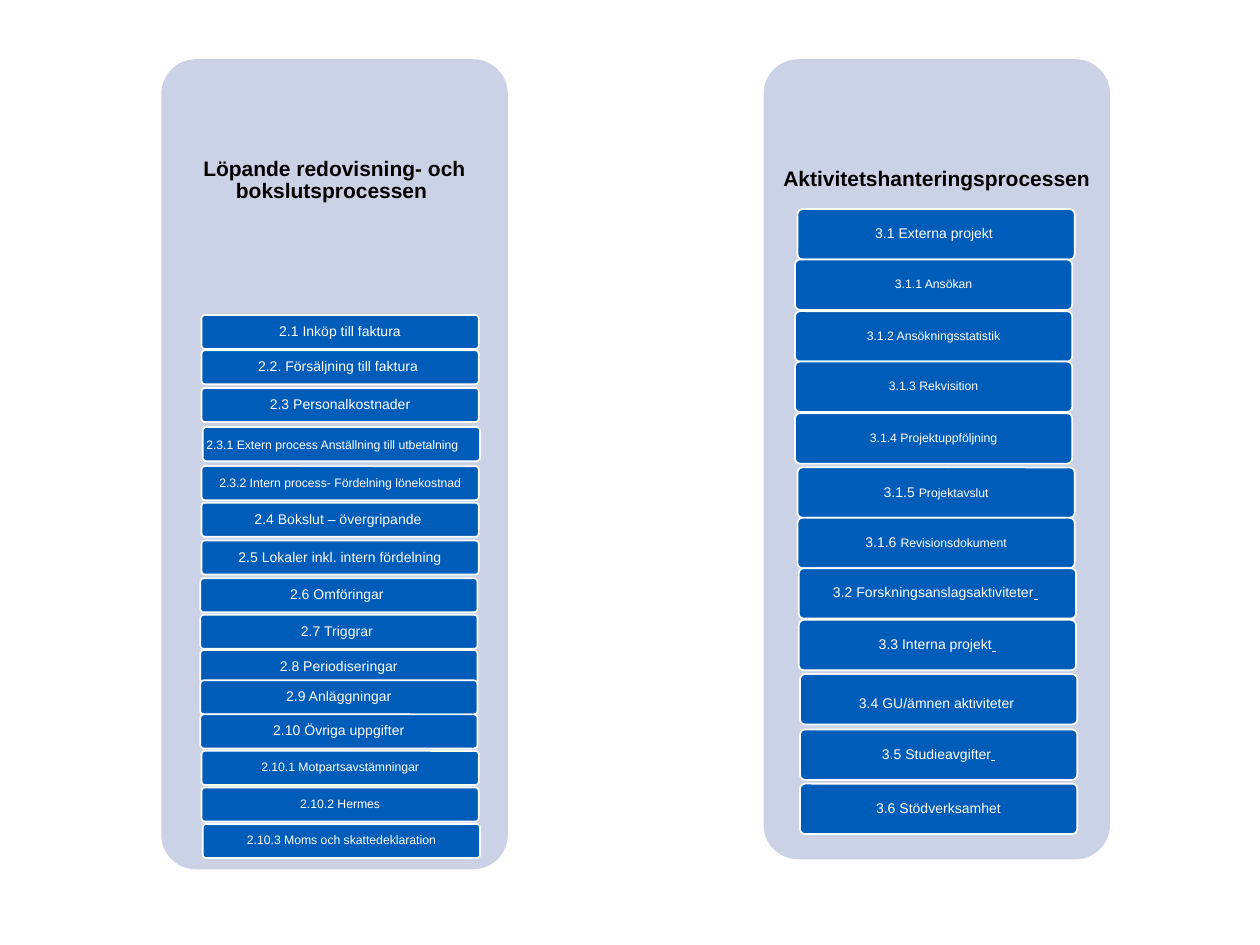
from pptx import Presentation
from pptx.dml.color import RGBColor
from pptx.enum import shapes, text
from pptx.util import Inches, Pt

COLORS = {"panel": "CCD2E6", "step": "005CB9", "white": "FFFFFF", "black": "000000"}
FONT = "Arial"
MAIN, SUB = 8, 7  # text sizes of the two step levels
STEP_WIDTH = 2.2

# Each step: offset from the panel's left and top, its runs, text options
LEFT_STEPS = [
    (0.32, 2.03, [("2.1 Inköp till faktura", MAIN)], {}),
    (0.32, 2.31, [("2.2. Försäljning till faktura ", MAIN)], {}),
    (0.32, 2.61, [("2.3 Personalkostnader", MAIN)], {}),
    (0.33, 2.92, [("2.3.1 Extern process Anställning till utbetalning", SUB)],
     {"align": text.PP_ALIGN.LEFT, "spacing": 1.0}),
    (0.32, 3.23, [("2.3.2 Intern process- Fördelning lönekostnad", SUB)], {}),
    (0.32, 3.52, [("2.4 Bokslut – övergripande ", MAIN)], {}),
    (0.32, 3.82, [("2.5 Lokaler inkl. intern fördelning", MAIN)], {}),
    (0.31, 4.12, [("2.6 Omföringar ", MAIN)], {}),
    (0.31, 4.41, [("2.7 Triggrar ", MAIN)], {}),
    (0.31, 4.69, [("2.8 Periodiseringar", MAIN)], {}),
    (0.31, 4.93, [("2.9 Anläggningar", MAIN)], {}),
    (0.31, 5.2, [("2.10 Övriga uppgifter", MAIN)], {}),
    (0.32, 5.49, [("2.10.1 Motpartsavstämningar", SUB)], {}),
    (0.32, 5.78, [("2.10.2 Hermes", SUB)], {}),
    (0.33, 6.07, [("2.10.3 Moms och skattedeklaration", SUB)], {}),
]
RIGHT_STEPS = [
    (0.27, 1.19, [("3.1 Externa projekt ", MAIN)], {}),
    (0.25, 1.59, [("3.1.1 Ansökan", SUB)], {}),
    (0.25, 2.0, [("3.1.2 Ansökningsstatistik", SUB)], {}),
    (0.25, 2.4, [("3.1.3 Rekvisition", SUB)], {}),
    (0.25, 2.81, [("3.1.4 Projektuppföljning", SUB)], {}),
    (0.27, 3.24, [("3.1.5 ", MAIN), ("Projektavslut", SUB)], {}),
    (0.27, 3.64, [("3.1.6 ", MAIN), ("Revisionsdokument", SUB)], {}),
    (0.28, 4.04, [("3.2 Forskningsanslagsaktiviteter", MAIN), (" ", MAIN, True),
                  (" ", MAIN)], {}),
    (0.28, 4.45, [("3.3 Interna projekt", MAIN), (" ", MAIN, True)], {}),
    (0.29, 4.88, [("3.4 GU/ämnen aktiviteter ", MAIN)], {"top_inset": 0.1}),
    (0.29, 5.32, [("3.5 Studieavgifter", MAIN), (" ", MAIN, True)], {}),
    (0.29, 5.75, [("3.6 Stödverksamhet", MAIN)], {}),
]


def rgb(name):
    return RGBColor.from_string(COLORS[name])


def write(sp, runs, color="white", bold=False, align=text.PP_ALIGN.CENTER,
          spacing=0.9, inset=0.02, top_inset=None):
    """Fill a shape with one paragraph of (text, size[, underline]) runs."""
    tf = sp.text_frame
    tf.word_wrap = True
    tf.vertical_anchor = text.MSO_ANCHOR.MIDDLE
    tf.margin_left = tf.margin_right = tf.margin_bottom = Inches(inset)
    tf.margin_top = Inches(inset if top_inset is None else top_inset)
    p = tf.paragraphs[0]
    p.alignment = align
    p.line_spacing = spacing
    for content, size, *underline in runs:
        r = p.add_run()
        r.text = content
        r.font.name = FONT
        r.font.size = Pt(size)
        r.font.bold = bold
        r.font.color.rgb = rgb(color)
        if underline:
            r.font.underline = True


def add_rounded(s, left, top, width, height, fill, line=None):
    sp = s.shapes.add_shape(shapes.MSO_SHAPE.ROUNDED_RECTANGLE, Inches(left),
                            Inches(top), Inches(width), Inches(height))
    sp.adjustments[0] = 0.1
    sp.shadow.inherit = False
    sp.fill.solid()
    sp.fill.fore_color.rgb = rgb(fill)
    if line:
        sp.line.color.rgb = rgb(line)
        sp.line.width = Pt(1)
    else:
        sp.line.fill.background()
    return sp


def add_process(s, left, top, width, height, title, steps, step_height):
    """Panel with a heading in its top three tenths and a column of steps."""
    add_rounded(s, left, top, width, height, "panel")
    heading = s.shapes.add_textbox(Inches(left), Inches(top),
                                   Inches(width), Inches(0.3 * height))
    write(heading, [(title, 12)], color="black", bold=True, inset=0.05)
    for dx, dy, runs, options in steps:
        sp = add_rounded(s, left + dx, top + dy, STEP_WIDTH, step_height,
                         "step", "white")
        write(sp, runs, **options)


def main():
    prs = Presentation()
    prs.slide_width, prs.slide_height = Inches(10), Inches(7.5)
    s = prs.slides.add_slide(prs.slide_layouts[6])
    add_process(s, 1.28, 0.47, 2.75, 6.43,
                "Löpande redovisning- och bokslutsprocessen ", LEFT_STEPS, 0.27)
    add_process(s, 6.06, 0.47, 2.75, 6.35,
                "Aktivitetshanteringsprocessen", RIGHT_STEPS, 0.4)
    prs.save("out.pptx")


if __name__ == "__main__":
    main()
